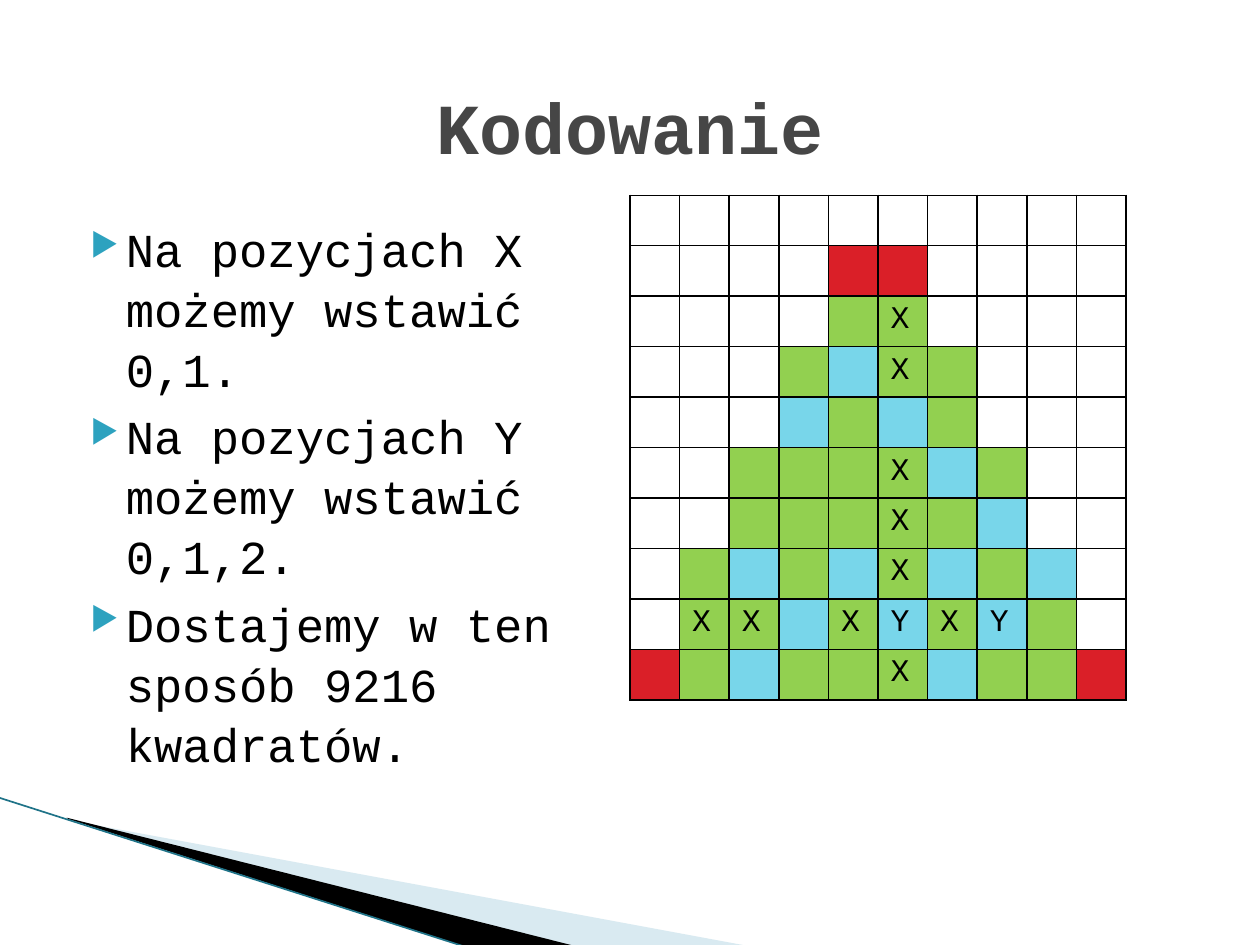
import pptx
import pptx.dml.color
import pptx.enum.shapes
import pptx.enum.text
import pptx.oxml
import pptx.oxml.ns
import pptx.util

Inches = pptx.util.Inches
Pt = pptx.util.Pt
RGBColor = pptx.dml.color.RGBColor

FONT = "Courier New"
BLACK = RGBColor(0x00, 0x00, 0x00)
WHITE = RGBColor(0xFF, 0xFF, 0xFF)
GREY = RGBColor(0x46, 0x46, 0x46)
PALE = RGBColor(0xA0, 0xCB, 0xDC)
TEAL = RGBColor(0x1F, 0x73, 0x88)
RED = RGBColor(0xDA, 0x1F, 0x28)
GREEN = RGBColor(0x92, 0xD0, 0x50)
BLUE = RGBColor(0x78, 0xD6, 0xEA)
BULLET = "2DA2BF"

TITLE = "Kodowanie"
POINTS = [
    "Na pozycjach X możemy wstawić 0,1.",
    "Na pozycjach Y możemy wstawić 0,1,2.",
    "Dostajemy w ten sposób 9216 kwadratów.",
]

# One letter per cell: X is a green cell marked X, Y a blue cell marked Y
TREE = [
    "..........",
    "....RR....",
    "....GX....",
    "...GBXG...",
    "...BGBG...",
    "..GGGXBG..",
    "..GGGXGB..",
    ".GBGBXBGB.",
    ".XXBXYXYG.",
    "RGBGGXBGGR",
]
FILLS = {".": WHITE, "R": RED, "G": GREEN, "B": BLUE, "X": GREEN, "Y": BLUE}
LEFT, TOP, COL, ROW = 5, 1.55, 0.394, 0.4

PALE_WEDGE = [(0.55, 6.51), (5.95, 7.51), (4.56, 7.51), (0.55, 6.5)]
DARK_WEDGE = [(0.53, 6.49), (4.57, 7.51), (3.72, 7.52), (0.54, 6.5)]


def add_xml(parent, text):
    """Append a DrawingML element, given without its namespace."""
    space = pptx.oxml.ns.nsdecls("a")
    tag, rest = text[:-1].split(" ", 1) if " " in text.split(">")[0] else (None, None)
    if tag:
        text = f"{tag} {space} {rest}>"
    else:
        head, rest = text.split(">", 1)
        text = f"{head.rstrip('/')} {space}{'/' if head.endswith('/') else ''}>{rest}"
    node = pptx.oxml.parse_xml(text)
    parent.append(node)
    return node


def add_wedge(slide, points, color, alpha=None):
    spots = [(Inches(x), Inches(y)) for x, y in points]
    path = slide.shapes.build_freeform(*spots[0])
    path.add_line_segments(spots[1:], close=True)
    shape = path.convert_to_shape()
    shape.shadow.inherit = False
    shape.fill.solid()
    shape.fill.fore_color.rgb = color
    shape.line.fill.background()
    if alpha:
        tint = shape.fill._xPr.find(".//" + pptx.oxml.ns.qn("a:srgbClr"))
        add_xml(tint, f'<a:alpha val="{alpha * 1000}"/>')


def add_edge(slide):
    line = slide.shapes.add_connector(
        pptx.enum.shapes.MSO_CONNECTOR.STRAIGHT,
        Inches(-0.01), Inches(6.33), Inches(3.71), Inches(7.52))
    line.line.color.rgb = TEAL
    line.line.width = Pt(0.95)
    add_xml(line._element.spPr, "<a:effectLst/>")


def add_box(slide, left, top, width, height, inset):
    box = slide.shapes.add_textbox(*map(Inches, (left, top, width, height)))
    frame = box.text_frame
    frame.word_wrap = True
    frame.margin_top = Inches(inset)
    return frame


def style(para, size, color, bold=False):
    font = para.font
    font.name, font.size, font.bold = FONT, Pt(size), bold
    font.color.rgb = color


def add_points(slide):
    frame = add_box(slide, 0.5, 1.62, 4.26, 4.95, 0.1)
    for i, text in enumerate(POINTS):
        para = frame.add_paragraph() if i else frame.paragraphs[0]
        para.text = text
        para.line_spacing = 1.06
        if i:
            para.space_before = Pt(4)
        props = para._p.get_or_add_pPr()
        props.set("marL", str(Inches(0.4)))
        props.set("indent", str(Inches(-0.28)))
        add_xml(props, f'<a:buClr><a:srgbClr val="{BULLET}"/></a:buClr>')
        add_xml(props, '<a:buSzPct val="68000"/>')
        add_xml(props, '<a:buChar char="▶"/>')
        style(para, 27, BLACK)


def add_title(slide):
    frame = add_box(slide, 0.5, 0.3, 9, 1.25, 0.2)
    frame.vertical_anchor = pptx.enum.text.MSO_ANCHOR.MIDDLE
    para = frame.paragraphs[0]
    para.text = TITLE
    para.alignment = pptx.enum.text.PP_ALIGN.CENTER
    style(para, 41, GREY, True)


def add_borders(cell):
    props = cell._tc.get_or_add_tcPr()
    for side in "LRTB":
        add_xml(props, f'<a:ln{side} w="{Pt(1)}"><a:solidFill>'
                       f'<a:srgbClr val="{BLACK}"/></a:solidFill></a:ln{side}>')


def add_tree(slide):
    rows, cols = len(TREE), len(TREE[0])
    table = slide.shapes.add_table(
        rows, cols, Inches(LEFT), Inches(TOP),
        Inches(COL * cols), Inches(ROW * rows)).table
    table.first_row = table.horz_banding = False
    for col in table.columns:
        col.width = Inches(COL)
    for row, marks in zip(table.rows, TREE):
        row.height = Inches(ROW)
        for cell, mark in zip(row.cells, marks):
            add_borders(cell)
            cell.fill.solid()
            cell.fill.fore_color.rgb = FILLS[mark]
            if mark in "XY":
                cell.text = mark
            style(cell.text_frame.paragraphs[0], 18, BLACK)


def main():
    deck = pptx.Presentation()
    deck.slide_width, deck.slide_height = Inches(10), Inches(7.5)
    slide = deck.slides.add_slide(deck.slide_layouts[6])
    add_wedge(slide, PALE_WEDGE, PALE, 40)
    add_wedge(slide, DARK_WEDGE, BLACK)
    add_edge(slide)
    add_points(slide)
    add_title(slide)
    add_tree(slide)
    deck.save("out.pptx")


if __name__ == "__main__":
    main()
